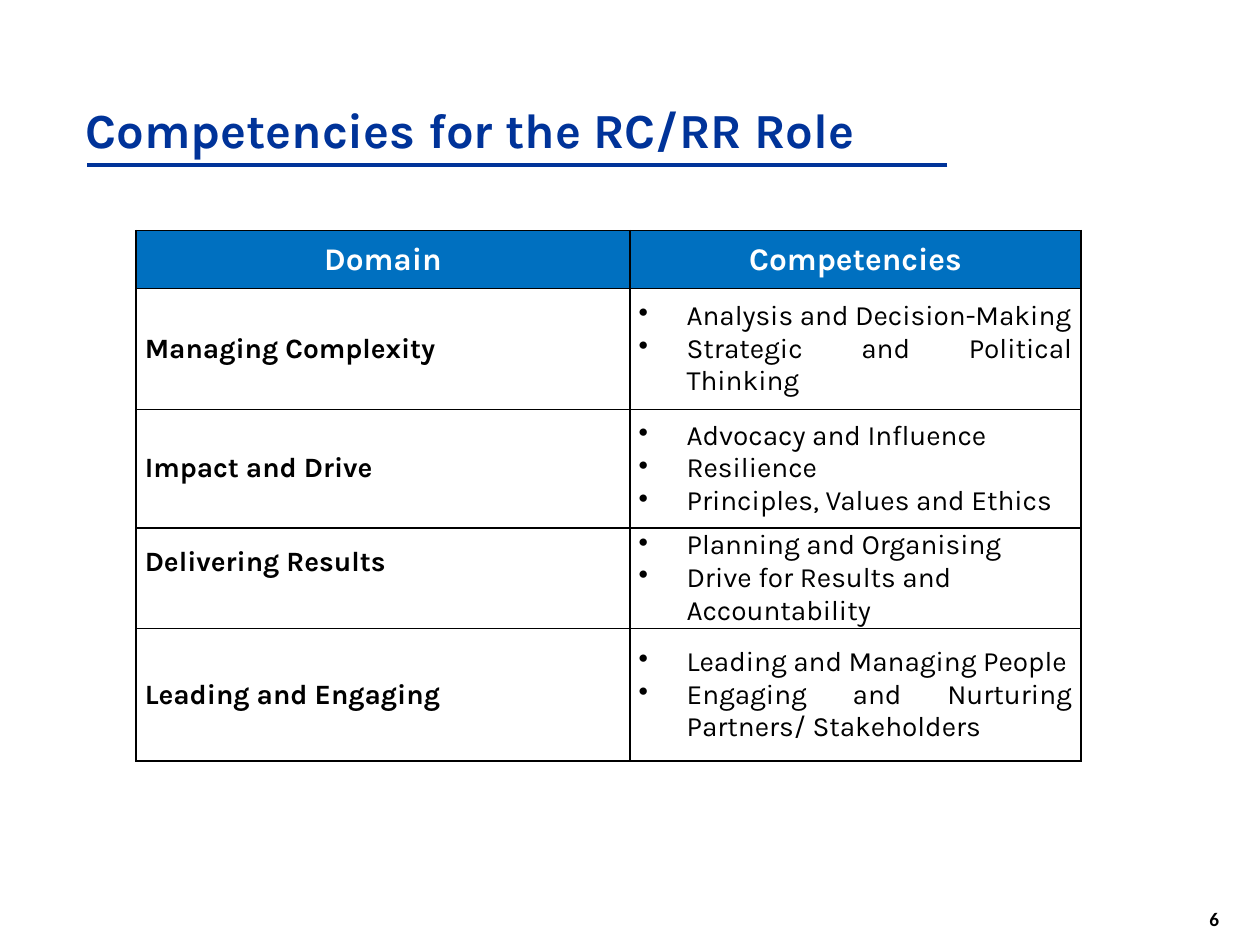
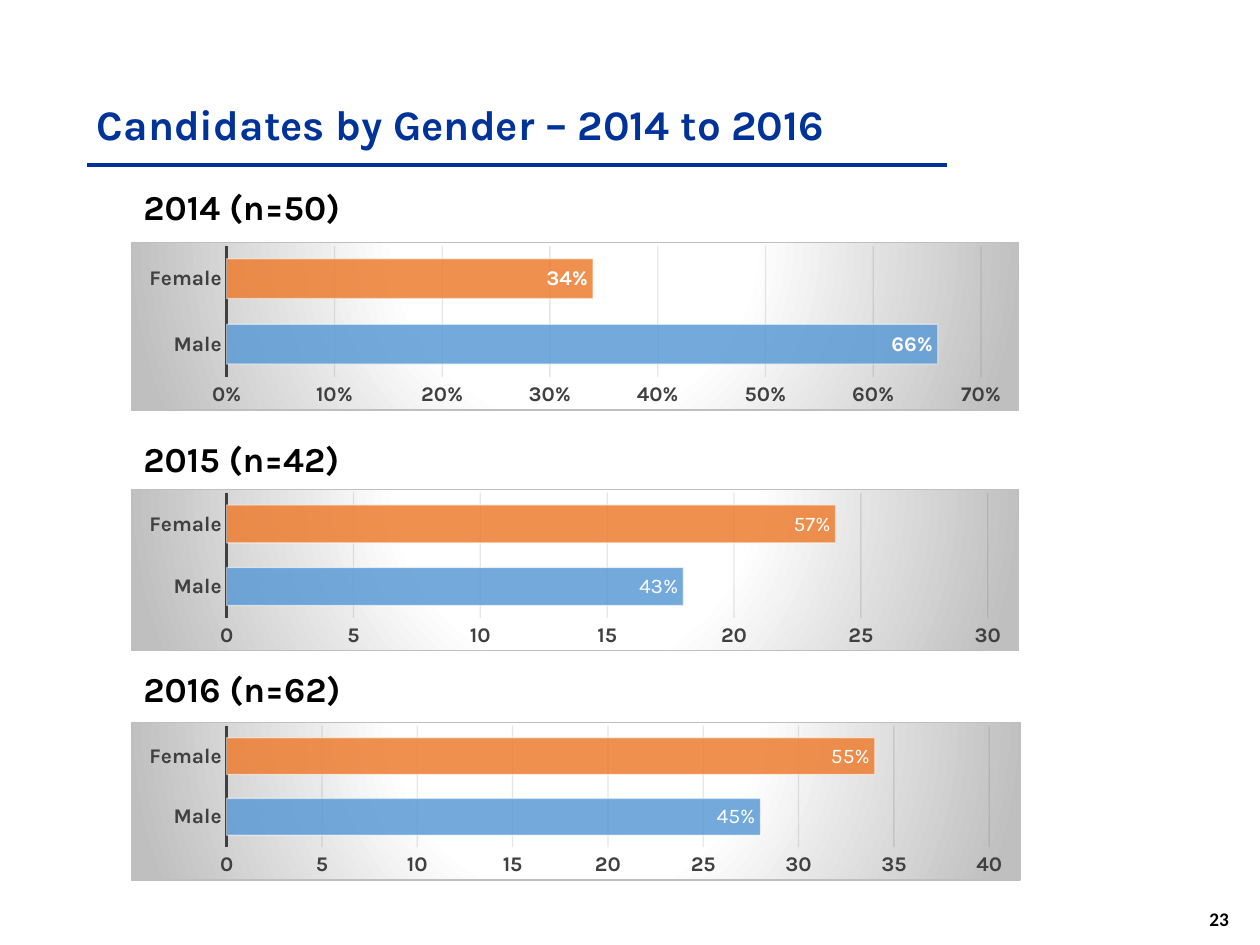
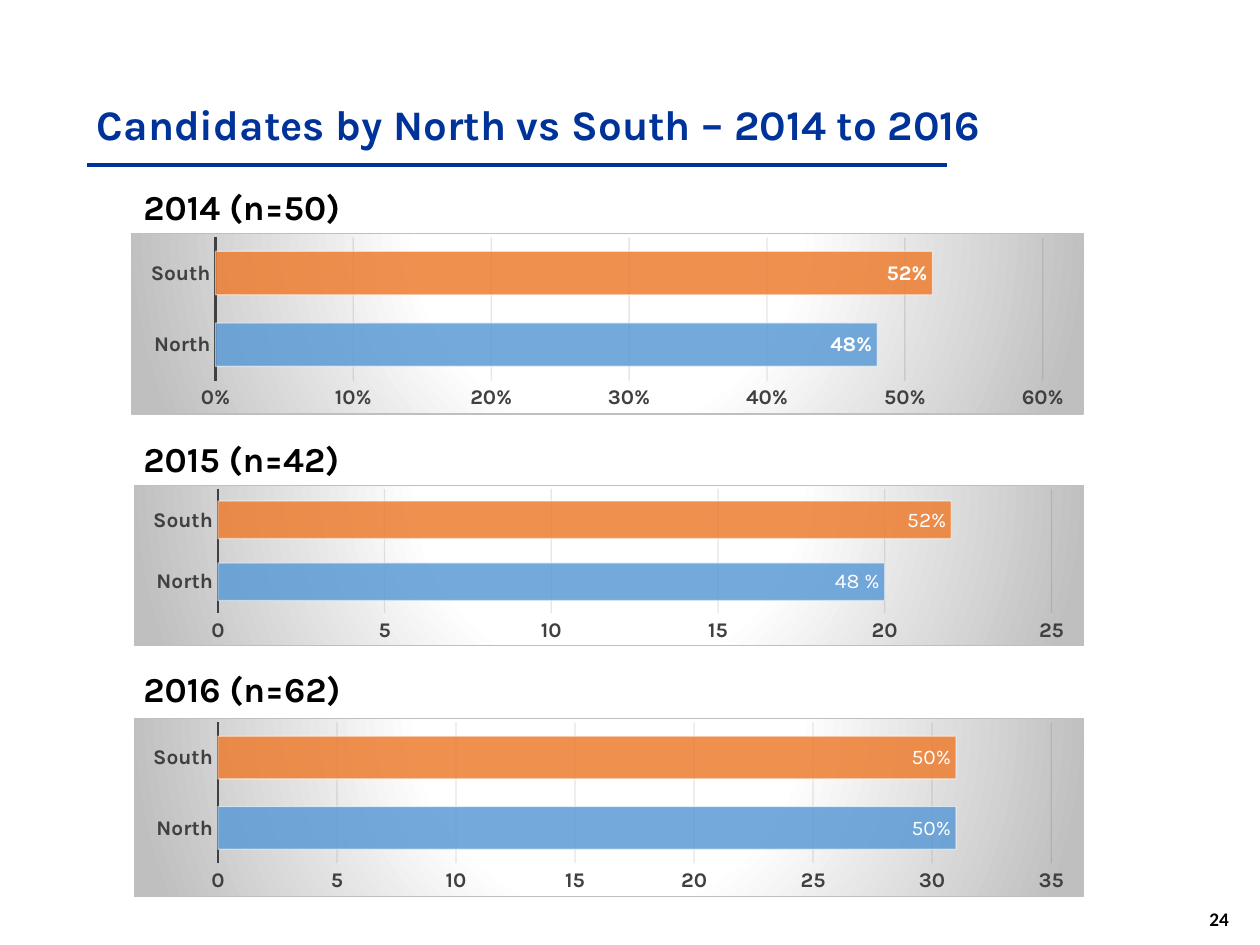
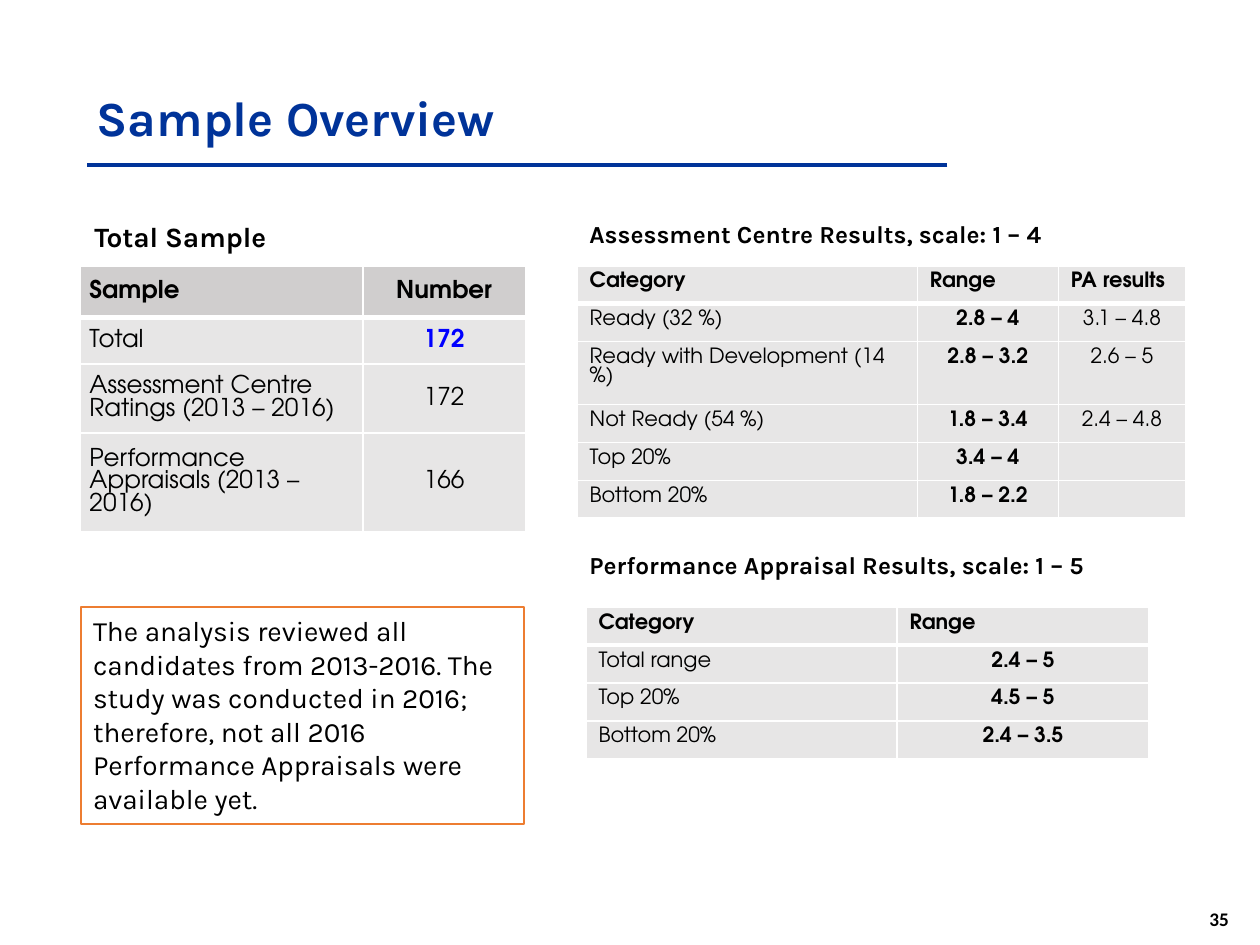
from dataclasses import dataclass

from lxml import etree
from pptx import Presentation
from pptx.chart.data import CategoryChartData
from pptx.dml.color import RGBColor
from pptx.enum.chart import XL_CHART_TYPE, XL_LABEL_POSITION, XL_TICK_MARK
from pptx.enum.shapes import MSO_CONNECTOR, MSO_SHAPE
from pptx.enum.text import MSO_ANCHOR, PP_ALIGN
from pptx.oxml import parse_xml
from pptx.oxml.ns import nsdecls, qn
from pptx.util import Inches, Pt

LEFT, CENTER, JUSTIFY = PP_ALIGN.LEFT, PP_ALIGN.CENTER, PP_ALIGN.JUSTIFY
TOP, MIDDLE, BOTTOM = MSO_ANCHOR.TOP, MSO_ANCHOR.MIDDLE, MSO_ANCHOR.BOTTOM
BAR = XL_CHART_TYPE.BAR_CLUSTERED
INSIDE_END = XL_LABEL_POSITION.INSIDE_END
NO_TICK = XL_TICK_MARK.NONE
STRAIGHT = MSO_CONNECTOR.STRAIGHT
RECTANGLE = MSO_SHAPE.RECTANGLE

SLIDE_WIDTH, SLIDE_HEIGHT = Inches(10), Inches(7.5)
GRID_COLUMNS, GRID_ROWS = 100, 75


@dataclass(frozen=True)
class Theme:
    font: str = "Karla"
    table_font: str = "TeX Gyre Adventor"
    number_font: str = "Calibri"
    title: str = "003399"
    header: str = "0070C0"
    black: str = "000000"
    white: str = "FFFFFF"
    axis: str = "404040"
    gridline: str = "0D0D0D"
    panel_edge: str = "BFBFBF"
    blue: str = "5B9BD5"
    orange: str = "ED7D31"
    highlight: str = "0000FF"
    dark_cell: str = "D0CECE"
    cell: str = "E7E6E6"
    title_size: int = 28
    long_title_size: int = 24
    year_size: int = 20
    header_size: int = 18
    body_size: int = 16
    caption_size: int = 14
    small_size: int = 12
    chart_size: int = 10
    number_size: int = 11


THEME = Theme()
YEAR_ROWS = (("2014 (n=50)", 14.2), ("2015 (n=42)", 34.2), ("2016 (n=62)", 52.5))


def across(columns):
    return round(SLIDE_WIDTH * columns / GRID_COLUMNS)


def down(rows):
    return round(SLIDE_HEIGHT * rows / GRID_ROWS)


def place(left, top, width, height):
    return across(left), down(top), across(width), down(height)


def rgb(value):
    return RGBColor.from_string(value)


def style_font(font, size, color=THEME.black, bold=False, name=THEME.font):
    font.name, font.size, font.bold = name, Pt(size), bold
    font.color.rgb = rgb(color)


def add_bullet(para, indent):
    properties = para._p.get_or_add_pPr()
    properties.set("marL", str(indent))
    properties.set("indent", str(-indent))
    etree.SubElement(properties, qn("a:buChar"), char="•")


def write_text(frame, text, *, size, color=THEME.black, bold=False, name=THEME.font,
               align=LEFT, spacing=None, bullet=False):
    lines = [text] if isinstance(text, str) else text
    aligns = align if isinstance(align, tuple) else (align,) * len(lines)
    for index, (line, line_align) in enumerate(zip(lines, aligns)):
        para = frame.paragraphs[0] if index == 0 else frame.add_paragraph()
        para.alignment = line_align
        if spacing:
            para.line_spacing = spacing
        if bullet:
            add_bullet(para, across(3.8))
        if line:
            span = para.add_run()
            span.text = line
            style_font(span.font, size, color, bold, name)
        else:
            etree.SubElement(para._p, qn("a:endParaRPr"), sz=str(size * 100))


def add_text(page, area, text, *, anchor=TOP, wrap=True, **text_format):
    box = page.shapes.add_textbox(*place(*area))
    box.text_frame.word_wrap = wrap
    box.text_frame.vertical_anchor = anchor
    write_text(box.text_frame, text, **text_format)


def add_caption(page, area, text, size):
    add_text(page, area, text, size=size, bold=True)


def add_page(deck, number, title, title_area, title_size):
    page = deck.slides.add_slide(deck.slide_layouts[6])
    add_text(page, (95, 71.5, 3.8, 2.9), str(number), wrap=False, bold=True,
             size=THEME.number_size, name=THEME.number_font)
    rule = page.shapes.add_connector(
        STRAIGHT, across(75.2), down(13.1), across(6.9), down(13.1))
    rule.line.color.rgb = rgb(THEME.title)
    rule.line.width = Pt(2)
    etree.SubElement(rule._element.spPr, qn("a:effectLst"))
    add_text(page, title_area, title, anchor=BOTTOM, size=title_size,
             color=THEME.title, bold=True, spacing=0.9)
    return page


def add_borders(cell, color, widths):
    properties = cell._tc.get_or_add_tcPr()
    for side in "LRTB":
        line = etree.SubElement(
            properties, qn(f"a:ln{side}"), w=str(Pt(widths.get(side, 1))))
        fill = etree.SubElement(line, qn("a:solidFill"))
        etree.SubElement(fill, qn("a:srgbClr"), val=color)


def add_table(page, corner, columns, rows, cells, cell_format, *, border, fills,
              header_rule=1, anchor=TOP, insets=(1, 0.5)):
    area = place(*corner, sum(columns), sum(rows))
    table = page.shapes.add_table(len(rows), len(columns), *area).table
    table.first_row = table.horz_banding = False
    for column, width in zip(table.columns, columns):
        column.width = across(width)
    for row, height in zip(table.rows, rows):
        row.height = down(height)
    for row_index, values in enumerate(cells):
        edges = {0: {"B": header_rule}, 1: {"T": header_rule}}.get(row_index, {})
        for column_index, value in enumerate(values):
            cell = table.cell(row_index, column_index)
            add_borders(cell, border, edges)
            cell.fill.solid()
            cell.fill.fore_color.rgb = rgb(fills[min(row_index, 1)])
            cell.vertical_anchor = anchor
            cell.margin_left = cell.margin_right = across(insets[0])
            cell.margin_top = cell.margin_bottom = down(insets[1])
            write_text(cell.text_frame, value, **cell_format(row_index, column_index))
    return table


def fade(fill, percent):
    for color in fill._xPr.iter(qn("a:srgbClr")):
        etree.SubElement(color, qn("a:alpha"), val=str(percent * 1000))


def paint_panel(chart):
    stops = "".join(
        f'<a:gs pos="{share * 1000}"><a:srgbClr val="{color}"/></a:gs>'
        for share, color in ((0, THEME.white), (39, THEME.white), (100, THEME.panel_edge)))
    panel = parse_xml(
        f'<c:spPr {nsdecls("c", "a")}><a:gradFill><a:gsLst>{stops}</a:gsLst>'
        '<a:path path="circle">'
        '<a:fillToRect l="50000" t="-80000" r="50000" b="180000"/></a:path></a:gradFill>'
        f'<a:ln w="{Pt(0.75)}"><a:solidFill><a:srgbClr val="{THEME.panel_edge}"/>'
        '</a:solidFill></a:ln></c:spPr>')
    chart._chartSpace.find(qn("c:txPr")).addprevious(panel)


def style_axes(chart, number_format):
    for axis in (chart.category_axis, chart.value_axis):
        axis.major_tick_mark = axis.minor_tick_mark = NO_TICK
        style_font(axis.tick_labels.font, THEME.small_size, THEME.axis, True)
    chart.category_axis.format.line.color.rgb = rgb(THEME.axis)
    chart.category_axis.format.line.width = Pt(1.5)
    values = chart.value_axis
    values.minimum_scale = 0
    values.format.line.fill.background()
    values.tick_labels.number_format = number_format
    values.tick_labels.number_format_is_linked = False
    gridline = values.major_gridlines.format.line
    gridline.color.rgb = rgb(THEME.gridline)
    gridline.width = Pt(0.75)
    fade(gridline.fill, 10)


def style_bars(series, point_labels):
    for index, color in enumerate((THEME.blue, THEME.orange)):
        point = series.points[index]
        point.format.fill.solid()
        point.format.fill.fore_color.rgb = rgb(color)
        fade(point.format.fill, 85)
        edge = point.format.line
        edge.color.rgb = rgb(THEME.white)
        edge.width = Pt(0.75)
        fade(edge.fill, 50)
        if point_labels:
            write_text(point.data_label.text_frame, point_labels[index],
                       size=THEME.small_size, color=THEME.white, align=CENTER)
            point.data_label.position = INSIDE_END


def add_bar_chart(page, area, categories, values, point_labels=None):
    number_format = "General" if point_labels else "0%"
    data = CategoryChartData(number_format=number_format)
    data.categories = categories
    data.add_series("Series 1", values)
    chart = page.shapes.add_chart(BAR, *place(*area), data).chart
    chart.has_title = chart.has_legend = False
    style_font(chart.font, THEME.chart_size)
    paint_panel(chart)
    style_axes(chart, number_format)
    plot = chart.plots[0]
    plot.gap_width = 65
    plot.vary_by_categories = False
    series = plot.series[0]
    labels = series.data_labels
    labels.show_value = True
    labels.position = INSIDE_END
    labels.number_format = number_format
    labels.number_format_is_linked = False
    style_font(labels.font, THEME.small_size, THEME.white, True)
    style_bars(series, point_labels)


def add_candidates_page(deck, number, subject, categories, charts):
    page = add_page(deck, number, f"Candidates by {subject} – 2014 to 2016",
                    (6.7, 6.7, 86.2, 5.7), THEME.long_title_size)
    for (year, top), (area, values, point_labels) in zip(YEAR_ROWS, charts):
        add_caption(page, (10.4, top, 20.5, 4.4), year, THEME.year_size)
        add_bar_chart(page, area, categories, values, point_labels)


def competency_format(row, column):
    if row == 0:
        return dict(size=THEME.header_size, color=THEME.white, bold=True, align=CENTER)
    align = (JUSTIFY, LEFT) if (row, column) == (3, 1) else JUSTIFY
    return dict(size=THEME.body_size, bold=column == 0, bullet=column == 1, align=align)


def add_competencies_page(deck):
    page = add_page(deck, 6, "Competencies for the RC/RR Role",
                    (5.8, 4.2, 85.4, 8.9), THEME.title_size)
    cells = [
        ["Domain", "Competencies"],
        ["Managing Complexity",
         ["Analysis and Decision-Making", "Strategic and Political Thinking"]],
        ["Impact and Drive",
         ["Advocacy and Influence", "Resilience", "Principles, Values and Ethics"]],
        ["Delivering Results",
         ["Planning and Organising", "Drive for Results and Accountability"]],
        ["Leading and Engaging",
         ["Leading and Managing People",
          "Engaging and Nurturing Partners/ Stakeholders"]],
    ]
    table = add_table(page, (10.8, 18.3), (39.2, 35.8), (4.6, 9.6, 9.4, 8, 10.5), cells,
                      competency_format, border=THEME.black,
                      fills=(THEME.header, THEME.white), anchor=MIDDLE, insets=(0.7, 0))
    table.cell(3, 0).margin_bottom = down(2.6)


def sample_format(row, column):
    total = (row, column) == (1, 1)
    return dict(size=THEME.caption_size, name=THEME.table_font, bold=row == 0 or total,
                color=THEME.highlight if total else THEME.black,
                align=CENTER if column else LEFT)


def range_format(row, column):
    return dict(size=THEME.small_size, name=THEME.table_font,
                bold=row == 0 or column == 1,
                align=CENTER if row and column else LEFT)


def add_range_table(page, corner, columns, cells):
    add_table(page, corner, columns, (3,) * len(cells), cells, range_format,
              border=THEME.white, fills=(THEME.cell, THEME.cell), header_rule=3)


def add_note(page, area, text):
    box = page.shapes.add_shape(RECTANGLE, *place(*area))
    box.shadow.inherit = False
    box.fill.solid()
    box.fill.fore_color.rgb = rgb(THEME.white)
    box.line.color.rgb = rgb(THEME.orange)
    box.line.width = Pt(1)
    box.text_frame.word_wrap = True
    box.text_frame.vertical_anchor = TOP
    write_text(box.text_frame, text, size=THEME.body_size)


def add_sample_page(deck):
    page = add_page(deck, 35, "Sample Overview", (6.7, 0.3, 46.6, 11.9), THEME.title_size)
    add_table(page, (6.4, 21.1), (22.4, 12.9), (4.1, 3.7, 5.3, 5.3), [
        ["Sample", "Number"],
        ["Total", "172"],
        ["Assessment Centre Ratings (2013 – 2016)", "172"],
        ["Performance Appraisals (2013 – 2016)", "166"],
    ], sample_format, border=THEME.white, fills=(THEME.dark_cell, THEME.cell),
        header_rule=3, anchor=MIDDLE, insets=(0.7, 0.4))
    add_range_table(page, (45.8, 21.1), (27, 11.2, 10.1), [
        ["Category", "Range", "PA results"],
        ["Ready (32 %)", "2.8 – 4", "3.1 – 4.8"],
        ["Ready with Development (14 %)", "2.8 – 3.2", "2.6 – 5"],
        ["Not Ready (54 %)", "1.8 – 3.4", "2.4 – 4.8"],
        ["Top 20%", "3.4 – 4", ""],
        ["Bottom 20%", "1.8 – 2.2", ""],
    ])
    add_caption(page, (45.8, 16.9, 45.3, 3.4),
                "Assessment Centre Results, scale: 1 – 4", THEME.caption_size)
    add_range_table(page, (46.5, 48.2), (24.7, 20), [
        ["Category", "Range"],
        ["Total range", "2.4 – 5"],
        ["Top 20%", "4.5 – 5"],
        ["Bottom 20%", "2.4 – 3.5"],
    ])
    add_caption(page, (45.8, 43.2, 45.3, 3.4),
                "Performance Appraisal Results, scale: 1 – 5", THEME.caption_size)
    add_caption(page, (6.5, 16.9, 25.3, 3.7), "Total Sample", THEME.body_size)
    add_note(page, (6.4, 48.2, 35.2, 17.2),
             "The analysis reviewed all candidates from 2013-2016. The study was "
             "conducted in 2016; therefore, not all 2016 Performance Appraisals were "
             "available yet.")


def main():
    deck = Presentation()
    deck.slide_width, deck.slide_height = SLIDE_WIDTH, SLIDE_HEIGHT
    add_competencies_page(deck)
    add_candidates_page(deck, 23, "Gender", ("Male", "Female"), (
        ((10.4, 19.2, 70.5, 13.4), (0.66, 0.34), None),
        ((10.4, 38.8, 70.5, 12.9), (18, 24), ("43%", "57%")),
        ((10.4, 57.3, 70.6, 12.6), (28, 34), ("45%", "55%")),
    ))
    add_candidates_page(deck, 24, "North vs South", ("North", "South"), (
        ((10.4, 18.5, 75.6, 14.4), (0.48, 0.52), None),
        ((10.6, 38.5, 75.4, 12.8), (20, 22), ("48 %", "52%")),
        ((10.6, 57, 75.4, 14.2), (31, 31), ("50%", "50%")),
    ))
    add_sample_page(deck)
    deck.save("out.pptx")


if __name__ == "__main__":
    main()
